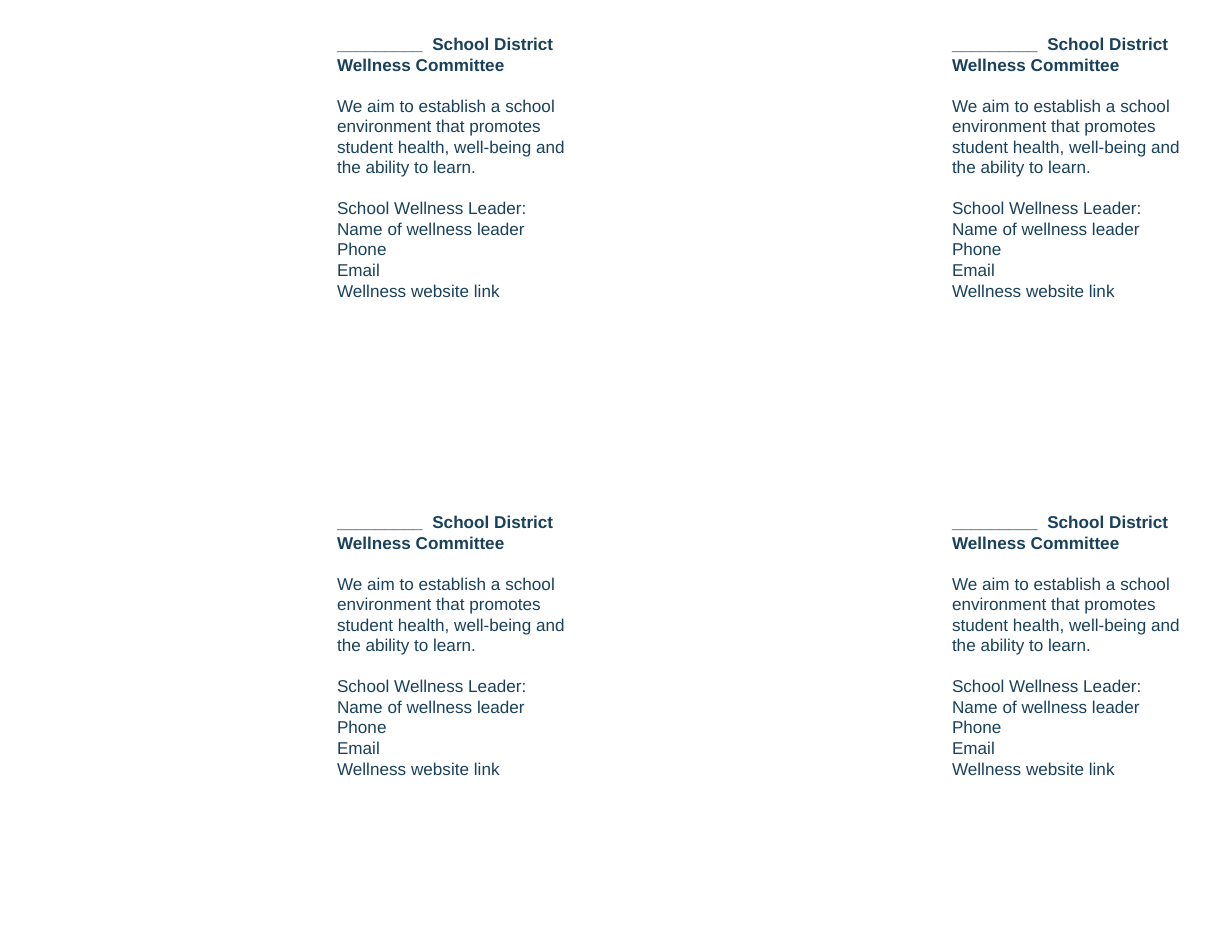
from itertools import product

from pptx import Presentation
from pptx.dml.color import RGBColor
from pptx.enum.shapes import MSO_SHAPE
from pptx.enum.text import MSO_ANCHOR, PP_ALIGN
from pptx.util import Emu, Pt

PX_PER_INCH = 112
LINE = 13.2
COLUMNS = (337, 952)
ROWS = (27, 505)
CARD_W, CARD_H = 237, 280
HEADING = "_________  School District\vWellness Committee"
MISSION = ("We aim to establish a school environment that promotes "
           "student health, well-being and the ability to learn.")
CONTACT = ("School Wellness Leader:", "Name of wellness leader",
           "Phone", "Email", "Wellness website link")


def px(n):
    """Turn whole pixels into EMU."""
    return Emu(round(n * 914400 / PX_PER_INCH))


def rgb(value):
    """Turn a hex string into a colour."""
    return RGBColor.from_string(value)


def write(p, text, size=11, bold=False, color="19415C", font="Arial", before=0):
    """Fill a paragraph with formatted text."""
    p.text = text
    p.alignment = PP_ALIGN.LEFT
    p.line_spacing = Pt(LINE)
    p.space_before = Pt(before)
    for r in p.runs:
        r.font.size = Pt(size)
        r.font.bold = bold
        r.font.name = font
        r.font.color.rgb = rgb(color)


def add_card(s, x, y, w, h):
    """Place one wellness committee card in the given box."""
    sp = s.shapes.add_shape(MSO_SHAPE.RECTANGLE, px(x), px(y), px(w), px(h))
    sp.shadow.inherit = False
    sp.fill.solid()
    sp.fill.fore_color.rgb = rgb("FFFFFF")
    sp.line.fill.background()
    tf = sp.text_frame
    tf.word_wrap = True
    tf.vertical_anchor = MSO_ANCHOR.MIDDLE
    tf.margin_left = tf.margin_right = tf.margin_top = tf.margin_bottom = 0
    write(tf.paragraphs[0], HEADING, bold=True)
    write(tf.add_paragraph(), MISSION, before=LINE)
    for i, text in enumerate(CONTACT):
        write(tf.add_paragraph(), text, before=0 if i else LINE)


def main():
    """Build the sheet of cards and save it."""
    prs = Presentation()
    prs.slide_width, prs.slide_height = px(1232), px(952)
    s = prs.slides.add_slide(prs.slide_layouts[6])
    for y, x in product(ROWS, COLUMNS):
        add_card(s, x, y, CARD_W, CARD_H)
    prs.save("out.pptx")


if __name__ == "__main__":
    main()
